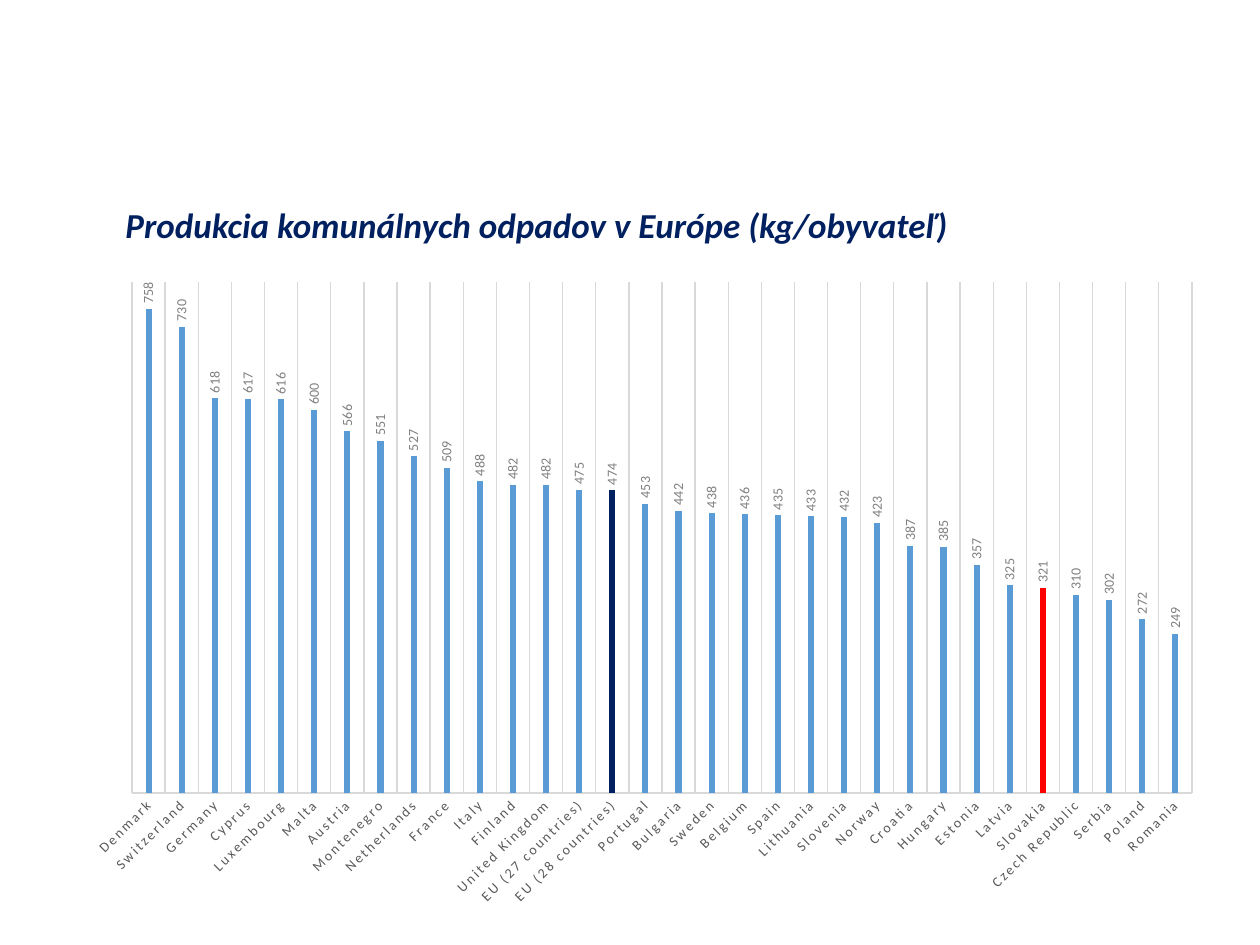
from typing import NamedTuple

import pptx
import pptx.chart.data
import pptx.dml.color
import pptx.enum.chart
import pptx.enum.text
import pptx.oxml
import pptx.oxml.ns
import pptx.util

PX = 914400 / 126
FONT = "Calibri"
NAVY = pptx.dml.color.RGBColor(0x00, 0x20, 0x60)
BLUE = pptx.dml.color.RGBColor(0x5B, 0x9B, 0xD5)
RED = pptx.dml.color.RGBColor(0xFF, 0x00, 0x00)
BLACK = pptx.dml.color.RGBColor(0x00, 0x00, 0x00)
DARK_GREY = pptx.dml.color.RGBColor(0x59, 0x59, 0x59)
MID_GREY = pptx.dml.color.RGBColor(0x80, 0x80, 0x80)
LIGHT_GREY = pptx.dml.color.RGBColor(0xD9, 0xD9, 0xD9)


class Box(NamedTuple):
    left: int
    top: int
    width: int
    height: int

    def emu(self) -> list[int]:
        return [px(n) for n in self]


class Bar(NamedTuple):
    country: str
    kg: int
    color: pptx.dml.color.RGBColor = BLUE


TITLE = Box(113, 200, 853, 54)
CHART = Box(73, 270, 1142, 649)
PLOT = Box(132, 282, 1060, 511)

BARS = [
    Bar("Denmark", 758),
    Bar("Switzerland", 730),
    Bar("Germany", 618),
    Bar("Cyprus", 617),
    Bar("Luxembourg", 616),
    Bar("Malta", 600),
    Bar("Austria", 566),
    Bar("Montenegro", 551),
    Bar("Netherlands", 527),
    Bar("France", 509),
    Bar("Italy", 488),
    Bar("Finland", 482),
    Bar("United Kingdom", 482),
    Bar("EU (27 countries)", 475),
    Bar("EU (28 countries)", 474, NAVY),
    Bar("Portugal", 453),
    Bar("Bulgaria", 442),
    Bar("Sweden", 438),
    Bar("Belgium", 436),
    Bar("Spain", 435),
    Bar("Lithuania", 433),
    Bar("Slovenia", 432),
    Bar("Norway", 423),
    Bar("Croatia", 387),
    Bar("Hungary", 385),
    Bar("Estonia", 357),
    Bar("Latvia", 325),
    Bar("Slovakia", 321, RED),
    Bar("Czech Republic", 310),
    Bar("Serbia", 302),
    Bar("Poland", 272),
    Bar("Romania", 249),
]


def px(n: int) -> int:
    return round(n * PX)


def set_font(font, size: int, color, bold=False, italic=False) -> None:
    font.name = FONT
    font.size = pptx.util.Pt(size)
    font.bold = bold
    font.italic = italic
    font.color.rgb = color


def add_text(slide, box: Box, text: str, **fmt) -> None:
    tf = slide.shapes.add_textbox(*box.emu()).text_frame
    tf.word_wrap = True
    tf.vertical_anchor = pptx.enum.text.MSO_ANCHOR.MIDDLE
    p = tf.paragraphs[0]
    p.line_spacing = 0.9
    r = p.add_run()
    r.text = text
    set_font(r.font, **fmt)


def style_labels(chart, owner: str, degrees: int, spacing: int) -> None:
    for body in chart.element.xpath(f".//{owner}/c:txPr/a:bodyPr"):
        body.set("rot", str(degrees * 60000))
        body.set("vert", "horz")
    for props in chart.element.xpath(f".//{owner}/c:txPr//a:defRPr"):
        props.set("spc", str(spacing))


def set_plot_area(chart, frame: Box, plot: Box) -> None:
    area = chart.element.xpath(".//c:plotArea")[0]
    for old in area.xpath("./c:layout"):
        area.remove(old)
    places = {
        "x": (plot.left - frame.left) / frame.width,
        "y": (plot.top - frame.top) / frame.height,
        "w": plot.width / frame.width,
        "h": plot.height / frame.height,
    }
    modes = '<c:xMode val="edge"/><c:yMode val="edge"/>'
    values = "".join(f'<c:{k} val="{v:.4f}"/>' for k, v in places.items())
    area.insert(0, pptx.oxml.parse_xml(
        f'<c:layout {pptx.oxml.ns.nsdecls("c")}><c:manualLayout>'
        f'<c:layoutTarget val="inner"/>{modes}{values}'
        "</c:manualLayout></c:layout>"
    ))


def set_line(line) -> None:
    line.color.rgb = LIGHT_GREY
    line.width = pptx.util.Pt(0.75)


def add_waste_chart(slide, frame: Box, plot_box: Box, bars: list[Bar]) -> None:
    data = pptx.chart.data.CategoryChartData()
    data.categories = [b.country for b in bars]
    data.add_series("Series 1", [b.kg for b in bars])
    kind = pptx.enum.chart.XL_CHART_TYPE.COLUMN_CLUSTERED
    chart = slide.shapes.add_chart(kind, *frame.emu(), data).chart
    chart.has_legend = False
    chart.has_title = False
    set_font(chart.font, 10, BLACK)

    plot = chart.plots[0]
    plot.vary_by_categories = False
    plot.gap_width = 444
    plot.overlap = -90
    series = plot.series[0]
    series.format.fill.solid()
    series.format.fill.fore_color.rgb = BLUE
    for i, bar in enumerate(bars):
        if bar.color != BLUE:
            fill = series.points[i].format.fill
            fill.solid()
            fill.fore_color.rgb = bar.color

    labels = series.data_labels
    labels.show_value = True
    labels.position = pptx.enum.chart.XL_LABEL_POSITION.OUTSIDE_END
    set_font(labels.font, 8, MID_GREY)

    cat = chart.category_axis
    cat.major_tick_mark = pptx.enum.chart.XL_TICK_MARK.NONE
    cat.has_major_gridlines = True
    set_line(cat.major_gridlines.format.line)
    set_line(cat.format.line)
    set_font(cat.tick_labels.font, 8, DARK_GREY)

    val = chart.value_axis
    val.minimum_scale = 0
    val.maximum_scale = 800
    val.has_major_gridlines = False
    val.visible = False

    style_labels(chart, "c:dLbls", -90, 0)
    style_labels(chart, "c:catAx", -45, 120)
    set_plot_area(chart, frame, plot_box)


def main() -> None:
    prs = pptx.Presentation()
    prs.slide_width, prs.slide_height = px(1260), px(945)
    s = prs.slides.add_slide(prs.slide_layouts[6])
    add_text(s, TITLE, "Produkcia komunálnych odpadov v Európe (kg/obyvateľ)",
             size=20, color=NAVY, bold=True, italic=True)
    add_waste_chart(s, CHART, PLOT, BARS)
    prs.save("out.pptx")


if __name__ == "__main__":
    main()
